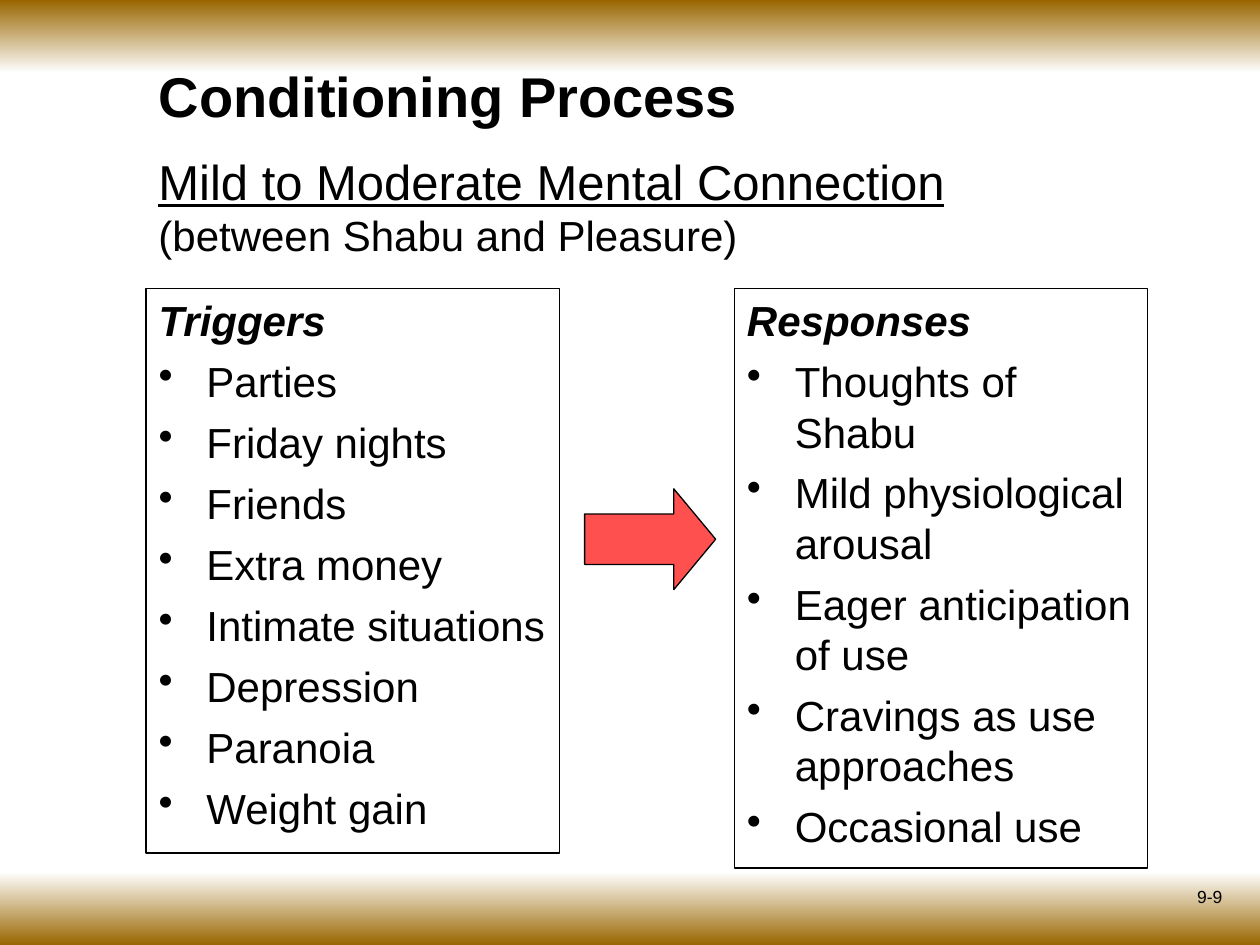
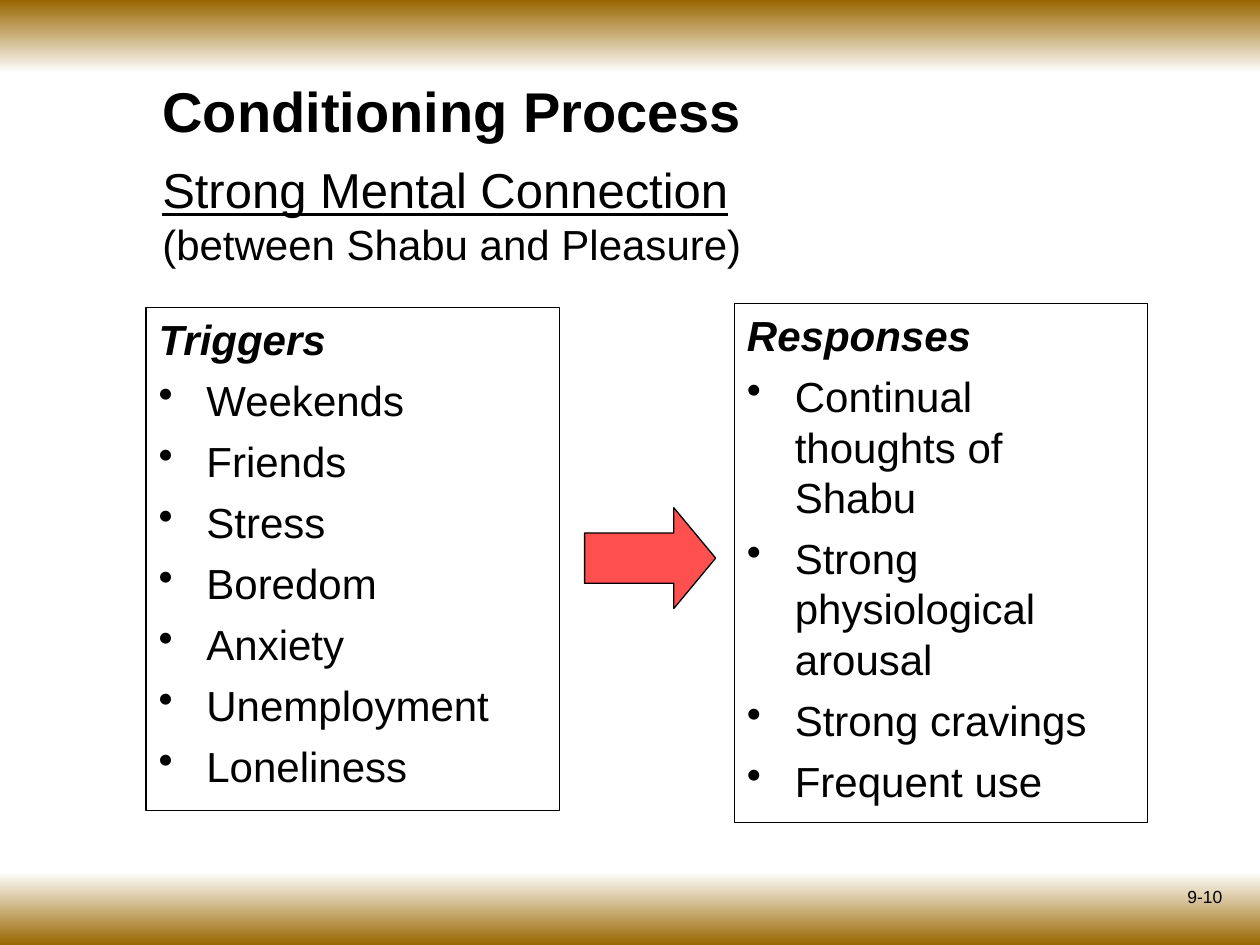
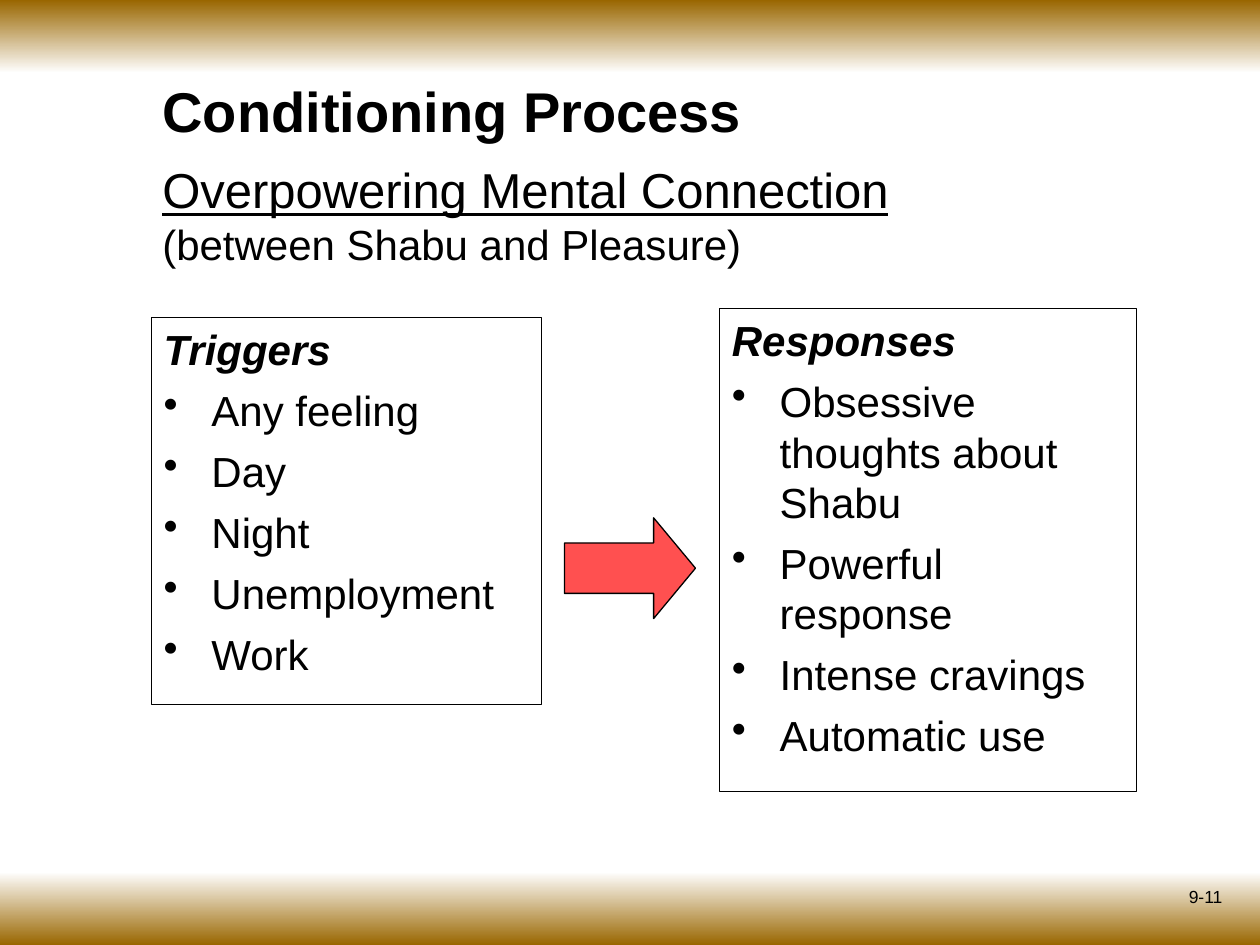
import pptx
import pptx.dml.color
import pptx.enum.shapes
import pptx.enum.text
import pptx.oxml.ns
import pptx.util
from lxml import etree
from pptx.util import Inches, Pt

BLACK = pptx.dml.color.RGBColor(0x00, 0x00, 0x00)
WHITE = pptx.dml.color.RGBColor(0xFF, 0xFF, 0xFF)
BROWN = pptx.dml.color.RGBColor(0x99, 0x66, 0x00)
RED = pptx.dml.color.RGBColor(0xFF, 0x50, 0x50)
FONT = "Arial"
INDENT = Inches(0.38)
SLIDE_WIDTH, SLIDE_HEIGHT, BAND_HEIGHT = 10, 7.5, 0.58

TITLE = "Conditioning Process"
SUBTITLE = "(between Shabu and Pleasure)"

# Positions are (left, top) or (left, top, width, height) in inches.
SLIDES = [
    {
        "number": "9-9",
        "title_at": (1.16, 0.44),
        "connection_at": (1.16, 1.15),
        "connection": "Mild to Moderate Mental Connection",
        "arrow_at": (4.64, 3.88),
        "lists": [
            ("Triggers", (1.16, 2.29, 3.28, 4.48),
             ["Parties", "Friday nights", "Friends", "Extra money",
              "Intimate situations", "Depression", "Paranoia", "Weight gain"]),
            ("Responses", (5.83, 2.29, 3.28, 4.6),
             ["Thoughts of Shabu", "Mild physiological arousal",
              "Eager anticipation of use", "Cravings as use approaches",
              "Occasional use"]),
        ],
    },
    {
        "number": "9-10",
        "title_at": (1.19, 0.56),
        "connection_at": (1.19, 1.22),
        "connection": "Strong Mental Connection",
        "arrow_at": (4.64, 4.03),
        "lists": [
            ("Triggers", (1.16, 2.44, 3.28, 3.99),
             ["Weekends", "Friends", "Stress", "Boredom", "Anxiety",
              "Unemployment", "Loneliness"]),
            ("Responses", (5.83, 2.41, 3.28, 4.12),
             ["Continual thoughts of Shabu", "Strong physiological arousal",
              "Strong cravings", "Frequent use"]),
        ],
    },
    {
        "number": "9-11",
        "title_at": (1.19, 0.56),
        "connection_at": (1.19, 1.22),
        "connection": "Overpowering Mental Connection",
        "arrow_at": (4.48, 4.11),
        "lists": [
            ("Triggers", (1.2, 2.52, 3.1, 3.07),
             ["Any feeling", "Day", "Night", "Unemployment", "Work"]),
            ("Responses", (5.71, 2.45, 3.31, 3.83),
             ["Obsessive thoughts about Shabu", "Powerful response",
              "Intense cravings", "Automatic use"]),
        ],
    },
]


def to_lengths(*inches):
    return [Inches(value) for value in inches]


def prepare_frame(shape):
    frame = shape.text_frame
    frame.word_wrap = True
    frame.auto_size = pptx.enum.text.MSO_AUTO_SIZE.NONE
    frame.vertical_anchor = pptx.enum.text.MSO_ANCHOR.TOP
    return frame


def add_bullet(para):
    properties = para._p.get_or_add_pPr()
    properties.set("marL", str(INDENT))
    properties.set("indent", str(-INDENT))
    bullet = pptx.oxml.ns.qn("a:buChar")
    defaults = properties.find(pptx.oxml.ns.qn("a:defRPr"))
    defaults.addprevious(etree.Element(bullet, char="•"))


def write_lines(frame, lines):
    """Write (text, size, style) lines, style being a dict of font attributes."""
    for index, (text, size, style) in enumerate(lines):
        para = frame.add_paragraph() if index else frame.paragraphs[0]
        para.text = text
        para.alignment = pptx.enum.text.PP_ALIGN.LEFT
        para.font.name = FONT
        para.font.size = Pt(size)
        para.font.color.rgb = BLACK
        for name, value in style.items():
            setattr(para.font, name, value)


def add_outlined_shape(slide, kind, at):
    shape = slide.shapes.add_shape(kind, *to_lengths(*at))
    shape.shadow.inherit = False
    shape.fill.background()
    shape.line.color.rgb = BLACK
    shape.line.width = Pt(0.75)
    return shape


def add_band(slide, top, colors):
    band = add_outlined_shape(slide, pptx.enum.shapes.MSO_SHAPE.RECTANGLE,
                              (0, top, SLIDE_WIDTH, BAND_HEIGHT))
    band.line.fill.background()
    band.fill.gradient()
    band.fill.gradient_angle = 270
    for stop, color in zip(band.fill.gradient_stops, colors):
        stop.color.rgb = color


def add_text(slide, at, lines):
    frame = prepare_frame(slide.shapes.add_textbox(*to_lengths(*at)))
    write_lines(frame, lines)
    return frame


def place_title(slide, at):
    title = slide.shapes.title
    title.left, title.top, title.width, title.height = to_lengths(*at, 4.83, 0.64)
    write_lines(prepare_frame(title), [(TITLE, 32, {"bold": True})])


def add_list(slide, heading, at, items):
    box = add_outlined_shape(slide, pptx.enum.shapes.MSO_SHAPE.RECTANGLE, at)
    frame = prepare_frame(box)
    lines = [(heading, 24, {"bold": True, "italic": True})]
    write_lines(frame, lines + [(item, 24, {}) for item in items])
    for para in frame.paragraphs[1:]:
        para.space_before = Pt(6)
        add_bullet(para)


def add_arrow(slide, at):
    arrow = add_outlined_shape(slide, pptx.enum.shapes.MSO_SHAPE.RIGHT_ARROW,
                               (*at, 1.04, 0.8))
    arrow.adjustments[0] = 0.5
    arrow.adjustments[1] = 0.415
    arrow.fill.solid()
    arrow.fill.fore_color.rgb = RED


def build_slide(deck, content):
    slide = deck.slides.add_slide(deck.slide_layouts.get_by_name("Title Only"))
    add_band(slide, SLIDE_HEIGHT - BAND_HEIGHT, (WHITE, BROWN))
    add_band(slide, 0, (BROWN, WHITE))
    number = add_text(slide, (7.47, 6.98, 2.33, 0.52), [(content["number"], 10, {})])
    number.paragraphs[0].alignment = pptx.enum.text.PP_ALIGN.RIGHT
    place_title(slide, content["title_at"])
    add_text(slide, (*content["connection_at"], 7.94, 0.98),
             [(content["connection"], 28, {"underline": True}), (SUBTITLE, 24, {})])
    for heading, at, items in content["lists"]:
        add_list(slide, heading, at, items)
    add_arrow(slide, content["arrow_at"])


def main():
    deck = pptx.Presentation()
    deck.slide_width, deck.slide_height = to_lengths(SLIDE_WIDTH, SLIDE_HEIGHT)
    for content in SLIDES:
        build_slide(deck, content)
    deck.save("out.pptx")


if __name__ == "__main__":
    main()
